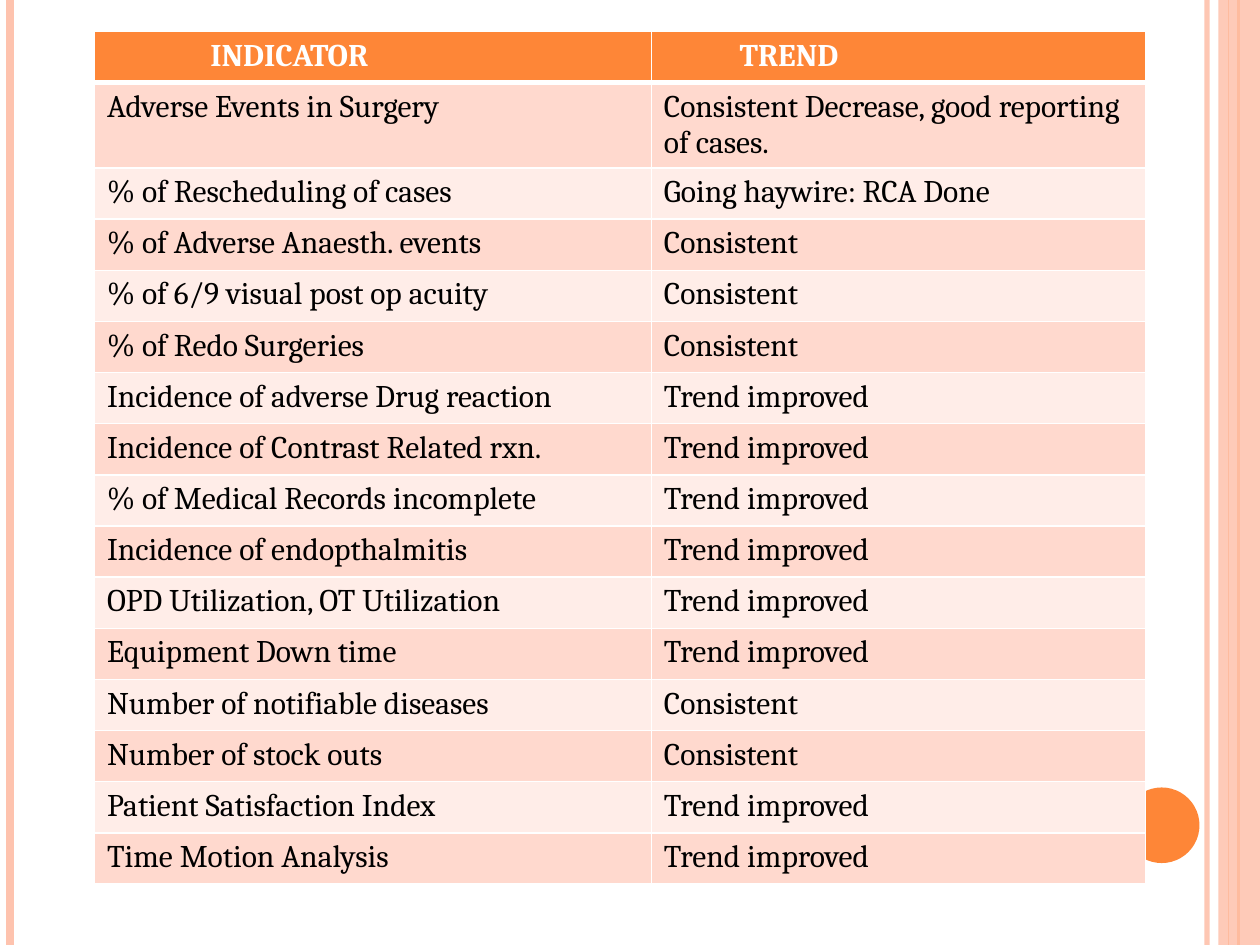
"""Build the slide of hospital quality indicators and their trends."""
from lxml import etree
from pptx import Presentation, util as u
from pptx.dml.color import RGBColor
from pptx.enum import shapes
from pptx.oxml import ns

COLORS = {"accent": "FE8637", "pale": "FEC3AE", "band_dark": "FFD9CE",
          "band_light": "FFEDE8", "white": "FFFFFF", "black": "000000"}

INDICATORS = [
    ("INDICATOR", "TREND"),
    ("Adverse Events in Surgery", "Consistent Decrease, good reporting of cases."),
    ("% of Rescheduling of cases", "Going haywire: RCA Done"),
    ("% of Adverse Anaesth. events", "Consistent"),
    ("% of 6/9 visual post op acuity", "Consistent"),
    ("% of Redo Surgeries", "Consistent"),
    ("Incidence of adverse Drug reaction", "Trend improved"),
    ("Incidence of Contrast Related rxn.", "Trend improved"),
    ("% of Medical Records incomplete", "Trend improved"),
    ("Incidence of endopthalmitis", "Trend improved"),
    ("OPD Utilization, OT Utilization", "Trend improved"),
    ("Equipment Down time", "Trend improved"),
    ("Number of notifiable diseases", "Consistent"),
    ("Number of stock outs", "Consistent"),
    ("Patient Satisfaction Index", "Trend improved"),
    ("Time Motion Analysis", "Trend improved"),
]


def write(cell, words, color="black", bold=False, left=0.1):
    cell.margin_left = u.Inches(left)
    run = cell.text_frame.paragraphs[0].add_run()
    run.text = words
    run.font.name = "Cambria"
    run.font.size = u.Pt(18)
    run.font.bold = bold
    run.font.color.rgb = RGBColor.from_string(COLORS[color])


def add_child(parent, tag, **attributes):
    return etree.SubElement(parent, ns.qn(tag), attributes)


prs = Presentation()
prs.slide_width, prs.slide_height = u.Inches(10), u.Inches(7.5)
slide = prs.slides.add_slide(prs.slide_layouts[6])

for x, color, width, opacity in [(9.58, "pale", 3, 93), (0.08, "pale", 4.5, 100),
                                 (9.83, "accent", 1.5, 100), (9.75, "accent", 0.75, 100)]:
    stripe = slide.shapes.add_connector(
        shapes.MSO_CONNECTOR.STRAIGHT, u.Inches(x), 0, u.Inches(x), prs.slide_height)
    stripe.line.width = u.Pt(width)
    stripe.line.color.rgb = RGBColor.from_string(COLORS[color])
    if opacity < 100:
        shade = stripe.line.fill._xPr.find(".//" + ns.qn("a:srgbClr"))
        add_child(shade, "a:alpha", val=str(opacity * 1000))
    add_child(stripe._element.spPr, "a:effectLst")

for kind, box, color, opacity in [
        (shapes.MSO_SHAPE.RECTANGLE, (9.67, 0, 0.33, 7.5), "pale", 87),
        (shapes.MSO_SHAPE.OVAL, (8.92, 6.25, 0.6, 0.6), "accent", 100)]:
    ornament = slide.shapes.add_shape(kind, *map(u.Inches, box))
    ornament.shadow.inherit = False
    ornament.line.fill.background()
    ornament.fill.solid()
    ornament.fill.fore_color.rgb = RGBColor.from_string(COLORS[color])
    if opacity < 100:
        shade = ornament._element.spPr.find(".//" + ns.qn("a:srgbClr"))
        add_child(shade, "a:alpha", val=str(opacity * 1000))

row_height = u.Inches(6.5 / len(INDICATORS))
trends = slide.shapes.add_table(
    len(INDICATORS), 2, u.Inches(0.75), u.Inches(0.25), u.Inches(8.33),
    row_height * len(INDICATORS)).table
trends.columns[0].width, trends.columns[1].width = u.Inches(4.42), u.Inches(3.92)

for r, entry in enumerate(INDICATORS):
    trends.rows[r].height = row_height
    for c, words in enumerate(entry):
        cell = trends.cell(r, c)
        if r == 0:
            band = "accent"
            write(cell, words, color="white", bold=True, left=(0.92, 0.7)[c])
        else:
            band = "band_dark" if r % 2 else "band_light"
            write(cell, words)
        borders = cell._tc.get_or_add_tcPr()
        for side in "LRTB":
            heavy = (r, side) in [(0, "B"), (1, "T")]
            edge = add_child(borders, f"a:ln{side}", w=str(u.Pt(3 if heavy else 1)))
            paint = add_child(edge, "a:solidFill")
            add_child(paint, "a:srgbClr", val=COLORS["white"])
        cell.fill.solid()
        cell.fill.fore_color.rgb = RGBColor.from_string(COLORS[band])

prs.save("out.pptx")
